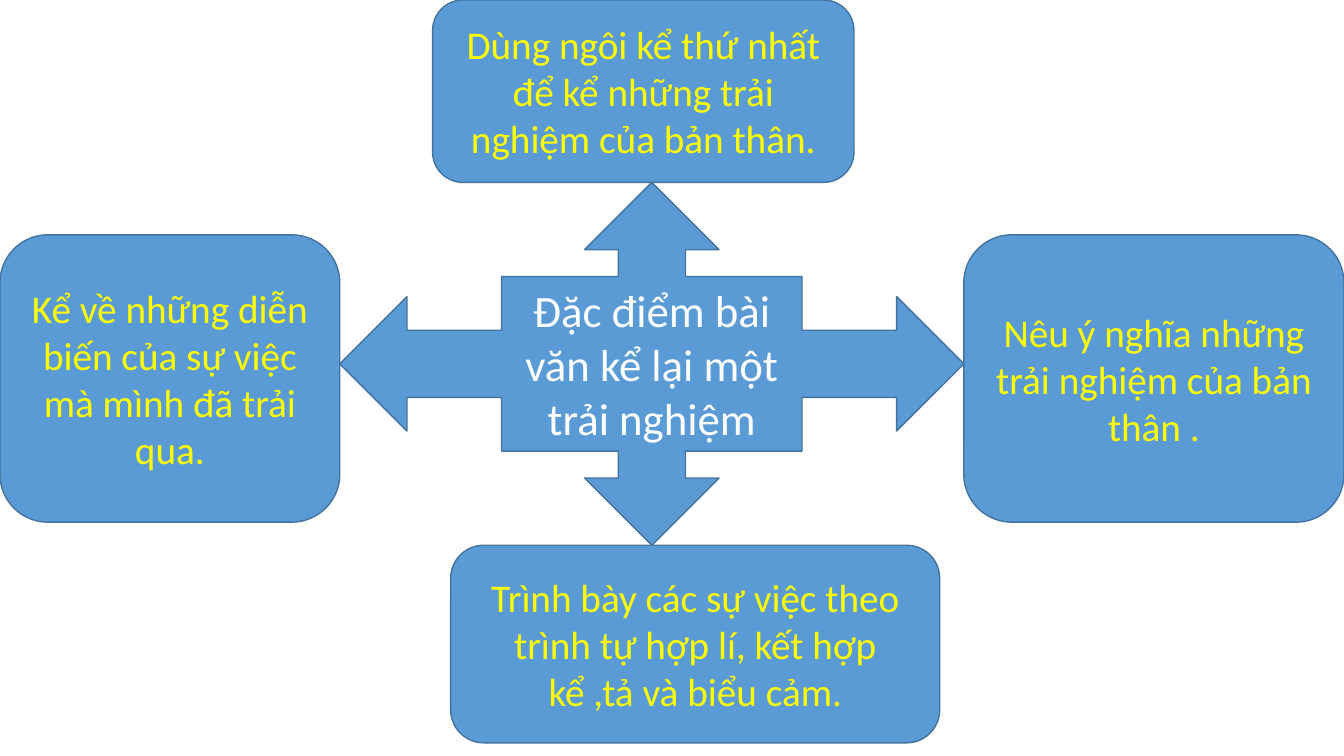
from pptx import Presentation
from pptx.dml.color import RGBColor
from pptx.enum.shapes import MSO_SHAPE
from pptx.enum.text import MSO_ANCHOR, PP_ALIGN
from pptx.util import Inches, Pt

BLUE = RGBColor(0x5B, 0x9B, 0xD5)
OUTLINE = RGBColor(0x43, 0x73, 0x9E)
WHITE = RGBColor(0xFF, 0xFF, 0xFF)
YELLOW = RGBColor(0xFF, 0xFF, 0x00)

SLIDE_W, SLIDE_H = 13.33, 7.5
HUB = (3.37, 1.81, 6.19, 3.6)
SIDE_TOP, SIDE_H = 2.33, 2.85

TOPIC = "Đặc điểm bài văn kể lại một trải nghiệm"
FIRST_PERSON = "Dùng ngôi kể thứ nhất để kể những trải nghiệm của bản thân."
MEANING = "Nêu ý nghĩa những trải nghiệm của bản thân ."
ORDER = "Trình bày các sự việc theo trình tự hợp lí, kết hợp kể ,tả và biểu cảm."
EVENTS = "Kể về những diễn biến của sự việc mà mình đã trải qua."


def add_block(s, kind, box, text, size, color):
    """Add a blue shape with centred text; box is left, top, width, height in inches."""
    sp = s.shapes.add_shape(kind, *map(Inches, box))
    sp.shadow.inherit = False
    sp.fill.solid()
    sp.fill.fore_color.rgb = BLUE
    sp.line.color.rgb = OUTLINE
    sp.line.width = Pt(1)
    tf = sp.text_frame
    tf.word_wrap = True
    tf.vertical_anchor = MSO_ANCHOR.MIDDLE
    tf.text = text
    p = tf.paragraphs[0]
    p.alignment = PP_ALIGN.CENTER
    font = p.runs[0].font
    font.name = "Calibri"
    font.size = Pt(size)
    font.color.rgb = color


def add_feature_map(s, hub):
    """Place the topic in the hub and one feature at the tip of each arrow."""
    left, top, width, height = hub
    right, bottom = left + width, top + height
    add_block(s, MSO_SHAPE.QUAD_ARROW_CALLOUT, hub, TOPIC, 32, WHITE)
    features = [
        (FIRST_PERSON, (4.29, 0, 4.18, top)),
        (MEANING, (right, SIDE_TOP, SLIDE_W - right, SIDE_H)),
        (ORDER, (4.47, bottom, 4.85, 1.96)),
        (EVENTS, (0, SIDE_TOP, left, SIDE_H)),
    ]
    for text, box in features:
        add_block(s, MSO_SHAPE.ROUNDED_RECTANGLE, box, text, 28, YELLOW)


def main():
    prs = Presentation()
    prs.slide_width = Inches(SLIDE_W)
    prs.slide_height = Inches(SLIDE_H)
    s = prs.slides.add_slide(prs.slide_layouts[6])
    add_feature_map(s, HUB)
    prs.save("out.pptx")


if __name__ == "__main__":
    main()
